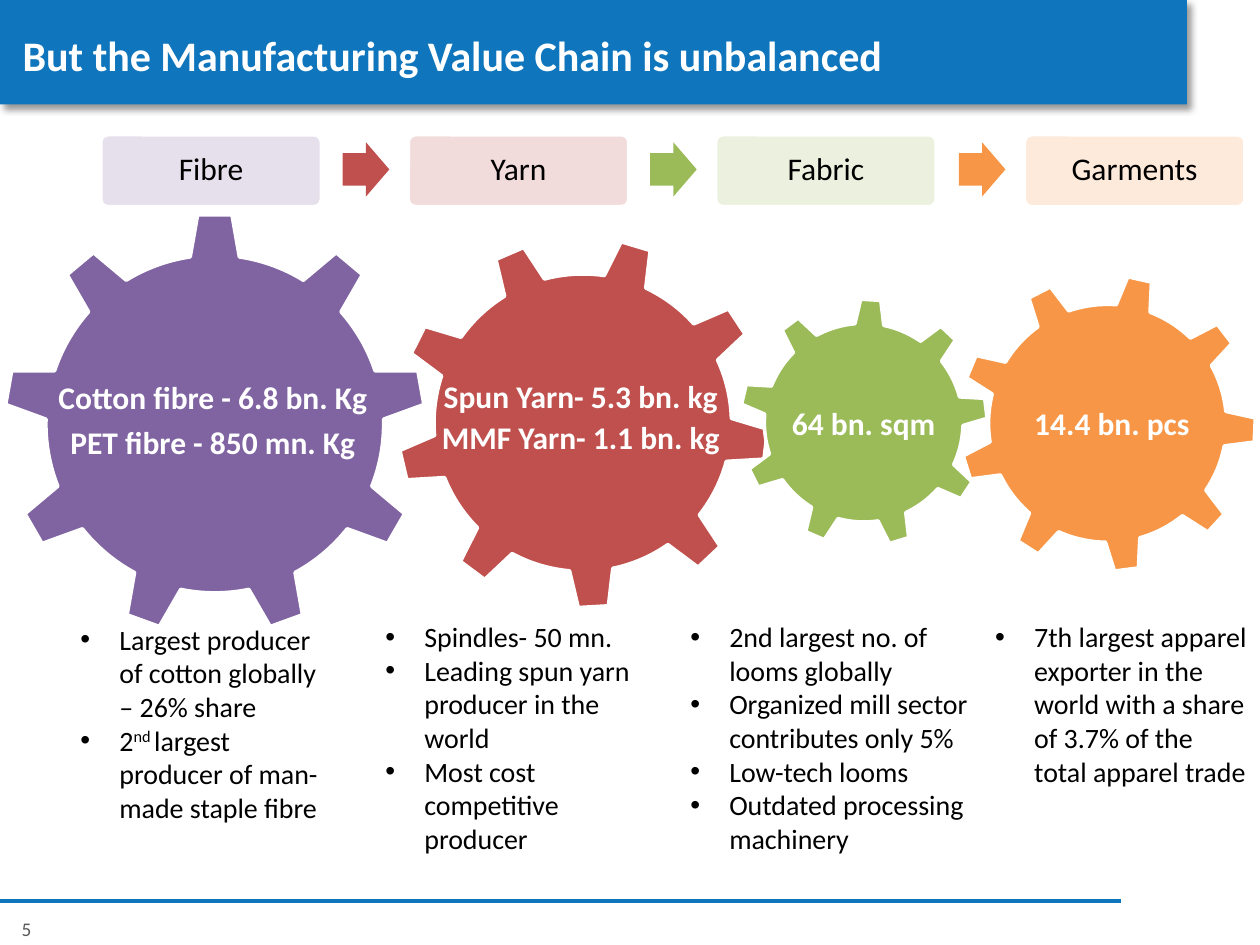
"""Build the textile value chain slide with gears, stage chips and bullet lists."""
from lxml.etree import SubElement
from pptx import Presentation
from pptx.dml.color import RGBColor
from pptx.enum.shapes import MSO_CONNECTOR, MSO_SHAPE
from pptx.enum.text import MSO_ANCHOR, PP_ALIGN
from pptx.oxml import parse_xml
from pptx.oxml.ns import nsdecls, qn
from pptx.util import Pt

PX = 9144
BLUE = RGBColor(0x0F, 0x75, 0xBC)
WHITE = RGBColor(0xFF, 0xFF, 0xFF)
BLACK = RGBColor(0, 0, 0)
GREY = RGBColor(0x59, 0x59, 0x59)
PURPLE = RGBColor(0x80, 0x64, 0xA2)
RED = RGBColor(0xC0, 0x50, 0x4D)
GREEN = RGBColor(0x9B, 0xBB, 0x59)
ORANGE = RGBColor(0xF7, 0x96, 0x46)
PALE_PURPLE = RGBColor(0xE6, 0xE0, 0xEC)
PALE_RED = RGBColor(0xF2, 0xDC, 0xDB)
PALE_GREEN = RGBColor(0xEB, 0xF1, 0xDE)
PALE_ORANGE = RGBColor(0xFD, 0xEA, 0xDA)


def add_shape(kind, bounds, fill, outlined=False):
    shape = slide.shapes.add_shape(kind, *(value * PX for value in bounds))
    shape.shadow.inherit = False
    shape.fill.solid()
    shape.fill.fore_color.rgb = fill
    if outlined:
        shape.line.color.rgb = WHITE
        shape.line.width = Pt(2)
    else:
        shape.line.fill.background()
    return shape


def write(box, lines, size, color, bold=False, align=PP_ALIGN.CENTER,
          anchor=MSO_ANCHOR.MIDDLE, bullet=False, spacing=None, after=None):
    frame = box.text_frame
    frame.word_wrap = True
    frame.vertical_anchor = anchor
    for index, line in enumerate(lines):
        para = frame.paragraphs[0] if index == 0 else frame.add_paragraph()
        para.alignment = align
        para.line_spacing = spacing
        para.space_after = after
        if bullet:
            properties = para._p.get_or_add_pPr()
            properties.set("marL", str(31 * PX))
            properties.set("indent", str(-31 * PX))
            SubElement(properties, qn("a:buFont")).set("typeface", "Arial")
            SubElement(properties, qn("a:buChar")).set("char", "•")
        para.font.name = "Calibri"
        para.font.size = Pt(size)
        para.font.bold = bold
        para.font.color.rgb = color
        for position, part in enumerate(line.split("^")):
            span = para.add_run()
            span.text = part
            if position == 1:
                span._r.get_or_add_rPr().set("baseline", "30000")


deck = Presentation()
deck.slide_width = 1000 * PX
deck.slide_height = 750 * PX
slide = deck.slides.add_slide(deck.slide_layouts[5])

band = add_shape(MSO_SHAPE.RECTANGLE, (0, 0, 942, 83), BLUE)
band._element.spPr.find(qn("a:effectLst")).append(parse_xml(
    f'<a:outerShdw {nsdecls("a")} blurRad="50800" dist="38100" dir="2700000" algn="tl" rotWithShape="0">'
    '<a:srgbClr val="000000"><a:alpha val="40000"/></a:srgbClr></a:outerShdw>'))
title = slide.shapes.title
title._element.addprevious(band._element)
title.left, title.top, title.width, title.height = (value * PX for value in (8, 17, 908, 53))
write(title, ["But the Manufacturing Value Chain is unbalanced"], 24, WHITE, True, PP_ALIGN.LEFT)

rule = slide.shapes.add_connector(MSO_CONNECTOR.STRAIGHT, 0, 715 * PX, 890 * PX, 715 * PX)
rule.line.color.rgb = BLUE
rule.line.width = Pt(2.25)
SubElement(rule._element.spPr, qn("a:effectLst"))
page_number = slide.shapes.add_textbox(0, 723 * PX, 42 * PX, 29 * PX)
write(page_number, ["5"], 11, GREY, anchor=MSO_ANCHOR.TOP)

gears = [
    (315, 188, 295, 16.7, RED),
    (3, 169, 335, 0, PURPLE),
    (761, 218, 236, 12.6, ORANGE),
    (587, 237, 197, 3.3, GREEN),
]
for left, top, size, angle, color in gears:
    gear = add_shape(MSO_SHAPE.GEAR_9, (left, top, size, size), color, outlined=True)
    gear.rotation = angle

volumes = [
    ((37, 257, 264, 156), ["Cotton fibre - 6.8 bn. Kg", "PET fibre - 850 mn. Kg"], 0.9, Pt(6.3)),
    ((319, 288, 284, 83), ["Spun Yarn- 5.3 bn. kg", "MMF Yarn- 1.1 bn. kg"], 1.07, None),
    ((613, 313, 145, 45), ["64 bn. sqm"], None, None),
    ((795, 313, 175, 45), ["14.4 bn. pcs"], None, None),
]
for bounds, lines, spacing, after in volumes:
    box = slide.shapes.add_textbox(*(value * PX for value in bounds))
    frame = box.text_frame
    frame.margin_left = frame.margin_right = 8 * PX
    write(box, lines, 18, WHITE, True, spacing=spacing, after=after)

stages = [
    ("Fibre", PALE_PURPLE, None),
    ("Yarn", PALE_RED, RED),
    ("Fabric", PALE_GREEN, GREEN),
    ("Garments", PALE_ORANGE, ORANGE),
]
for index, (name, fill, arrow_color) in enumerate(stages):
    left = 80 + index * 733 // 3
    chip = add_shape(MSO_SHAPE.ROUNDED_RECTANGLE, (left, 107, 175, 57), fill, outlined=True)
    chip.adjustments[0] = 0.1
    write(chip, [name], 18, BLACK, spacing=0.9)
    if arrow_color:
        arrow = add_shape(MSO_SHAPE.RIGHT_ARROW, (left - 52, 113, 37, 43), arrow_color)
        arrow.adjustments[0] = 0.6
        arrow.adjustments[1] = 0.5

notes = [
    ((54, 489, 220, 172), ["Largest producer of cotton globally – 26% share",
                           "2^nd ^largest producer of man-made staple fibre"]),
    ((296, 487, 221, 199), ["Spindles- 50 mn.", "Leading spun yarn producer in the world",
                            "Most cost competitive producer"]),
    ((538, 487, 242, 199), ["2nd largest no. of looms globally",
                            "Organized mill sector contributes only 5%",
                            "Low-tech looms", "Outdated processing machinery"]),
    ((780, 487, 220, 145), ["7th largest apparel exporter in the world with a share of 3.7% "
                            "of the total apparel trade"]),
]
for bounds, lines in notes:
    box = slide.shapes.add_textbox(*(value * PX for value in bounds))
    write(box, lines, 16, BLACK, align=PP_ALIGN.LEFT, anchor=MSO_ANCHOR.TOP, bullet=True)

deck.save("out.pptx")
